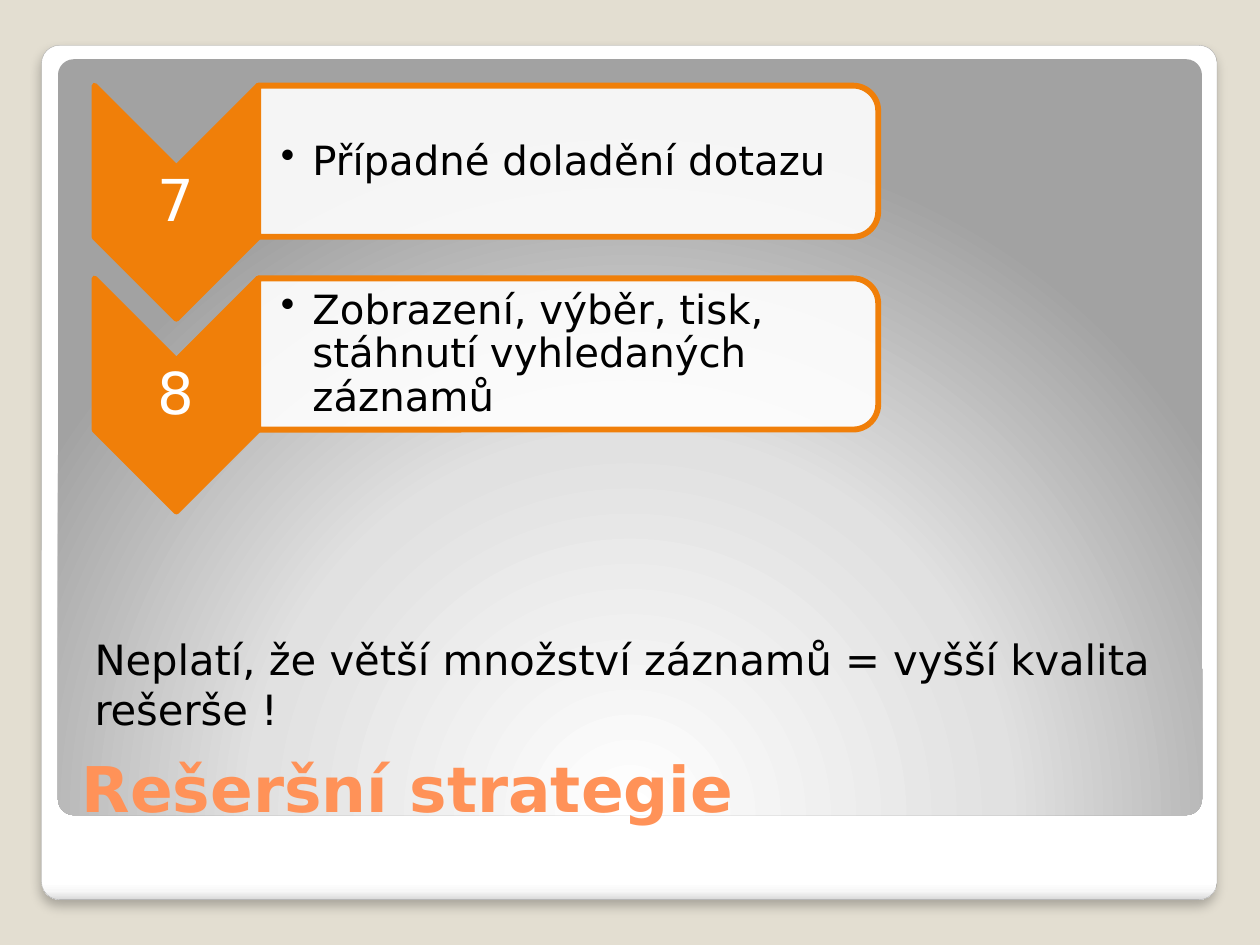
from lxml.etree import SubElement
from pptx import Presentation
from pptx.dml.color import RGBColor
from pptx.enum.shapes import MSO_SHAPE as Shape
from pptx.enum.text import MSO_ANCHOR as Anchor, PP_ALIGN as Align
from pptx.oxml import parse_xml
from pptx.oxml.ns import nsdecls, qn
from pptx.util import Inches, Pt

# Content
TITLE = "Rešeršní strategie"
NOTE = "Neplatí, že větší množství záznamů = vyšší kvalita rešerše !"
STEPS = [
    ("7", "Případné doladění dotazu"),
    ("8", "Zobrazení, výběr, tisk, stáhnutí vyhledaných záznamů"),
]

# Style
FONT = "DejaVu Sans"
COLORS = {"background": "E3DED1", "accent": "F07F09", "title": "FF9258",
          "text": "000000", "white": "FFFFFF", "edge": "A4A4A4"}
FRAME_STOPS = [(0, "FFFFFF"), (98, "FFFFFF"), (99, "F7F7F7"), (100, "DADADA")]
PANEL_STOPS = [(0, "FFFFFF"), (55, "E1E1E1"), (100, "A2A2A2")]
DOWNWARD = '<a:lin ang="5400000" scaled="0"/>'
FROM_BELOW = ('<a:path path="circle"><a:fillToRect l="50000" t="175000" '
              'r="50000" b="-75000"/></a:path>')

# Step grid, in inches
LEFT, TOP, PITCH = 0.75, 0.68, 1.53
ARROW_WIDTH, ARROW_HEIGHT = 1.3, 1.85
CARD_WIDTH, CARD_HEIGHT = 4.92, 1.2
LINE_WIDTH = 3.35

presentation = Presentation()
presentation.slide_width, presentation.slide_height = Inches(10), Inches(7.5)
slide = presentation.slides.add_slide(presentation.slide_layouts[6])


def color(name):
    return RGBColor.from_string(COLORS[name])


def add_shape(kind, left, top, width, height, turned=False):
    """Place a shape by its visible box; a turned one is rotated by 90 degrees."""
    if turned:
        left, top = left + (width - height) / 2, top + (height - width) / 2
        width, height = height, width
    shape = slide.shapes.add_shape(kind, *map(Inches, (left, top, width, height)))
    shape.rotation = 90 if turned else 0
    shape.shadow.inherit = False
    return shape


def add_panel(box, stops, direction):
    shape = add_shape(Shape.ROUNDED_RECTANGLE, *box)
    shape.adjustments[0] = 0.021
    shape.line.fill.background()
    stop_xml = "".join(f'<a:gs pos="{position * 1000}"><a:srgbClr val="{value}"/></a:gs>'
                       for position, value in stops)
    gradient = parse_xml(f'<a:gradFill {nsdecls("a")} rotWithShape="1">'
                         f'<a:gsLst>{stop_xml}</a:gsLst>{direction}</a:gradFill>')
    shape.element.spPr.find(qn("a:ln")).addprevious(gradient)
    return shape


def add_step_shape(kind, box, fill):
    shape = add_shape(kind, *box, turned=True)
    shape.fill.solid()
    shape.fill.fore_color.rgb = color(fill)
    shape.line.color.rgb = color("accent")
    shape.line.width = Pt(LINE_WIDTH)
    return shape


def add_text(text, box, size, name, insets=(0.1, 0.05, 0.1, 0.05),
             anchor=Anchor.TOP, bold=False):
    frame = slide.shapes.add_textbox(*map(Inches, box)).text_frame
    frame.word_wrap = True
    frame.vertical_anchor = anchor
    (frame.margin_left, frame.margin_top,
     frame.margin_right, frame.margin_bottom) = map(Inches, insets)
    paragraph = frame.paragraphs[0]
    run = paragraph.add_run()
    run.text = text
    run.font.name, run.font.size, run.font.bold = FONT, Pt(size), bold
    run.font.color.rgb = color(name)
    return paragraph


# Background, frame with its shadow, and inner panel
slide.background.fill.solid()
slide.background.fill.fore_color.rgb = color("background")
frame = add_panel((0.33, 0.36, 9.33, 6.78), FRAME_STOPS, DOWNWARD)
frame.line.color.rgb = color("edge")
frame.line.width = Pt(0.16)
frame.element.spPr.find(qn("a:effectLst")).append(parse_xml(
    f'<a:outerShdw {nsdecls("a")} blurRad="{Pt(6)}" dist="{Pt(4)}" dir="5400000" '
    'algn="t" rotWithShape="0"><a:srgbClr val="000000"><a:alpha val="25000"/>'
    '</a:srgbClr></a:outerShdw>'))
add_panel((0.46, 0.47, 9.08, 6), PANEL_STOPS, FROM_BELOW)

# Title and note
add_text(TITLE, (0.55, 5.45, 8.95, 1.15), 36, "title", anchor=Anchor.BOTTOM, bold=True)
add_text(NOTE, (0.55, 4.98, 8.95, 0.9), 23.8, "text", (0.2, 0.05, 0.1, 0.05))

# Numbered steps
for row, (number, label) in enumerate(STEPS):
    top = TOP + row * PITCH
    card_left = LEFT + ARROW_WIDTH
    add_step_shape(Shape.CHEVRON, (LEFT, top, ARROW_WIDTH, ARROW_HEIGHT), "accent")
    paragraph = add_text(number, (LEFT, top + ARROW_WIDTH / 2, ARROW_WIDTH, 0.56),
                         33, "white", (0.02,) * 4, Anchor.MIDDLE)
    paragraph.alignment = Align.CENTER
    paragraph.line_spacing = 0.9

    card = add_step_shape(Shape.ROUND_2_SAME_RECTANGLE,
                          (card_left, top, CARD_WIDTH, CARD_HEIGHT), "white")
    fill_color = card.element.spPr.find(qn("a:solidFill")).find(qn("a:srgbClr"))
    SubElement(fill_color, qn("a:alpha")).set("val", "90000")

    paragraph = add_text(label, (card_left, top + 0.06, CARD_WIDTH - 0.05, 1.09),
                         23, "text", (0.18, 0.02, 0.02, 0.02), Anchor.MIDDLE)
    paragraph.line_spacing = 0.9
    properties = paragraph._p.get_or_add_pPr()
    properties.set("marL", str(Inches(0.25)))
    properties.set("indent", str(-Inches(0.25)))
    SubElement(properties, qn("a:buChar")).set("char", "•")

presentation.save("out.pptx")
